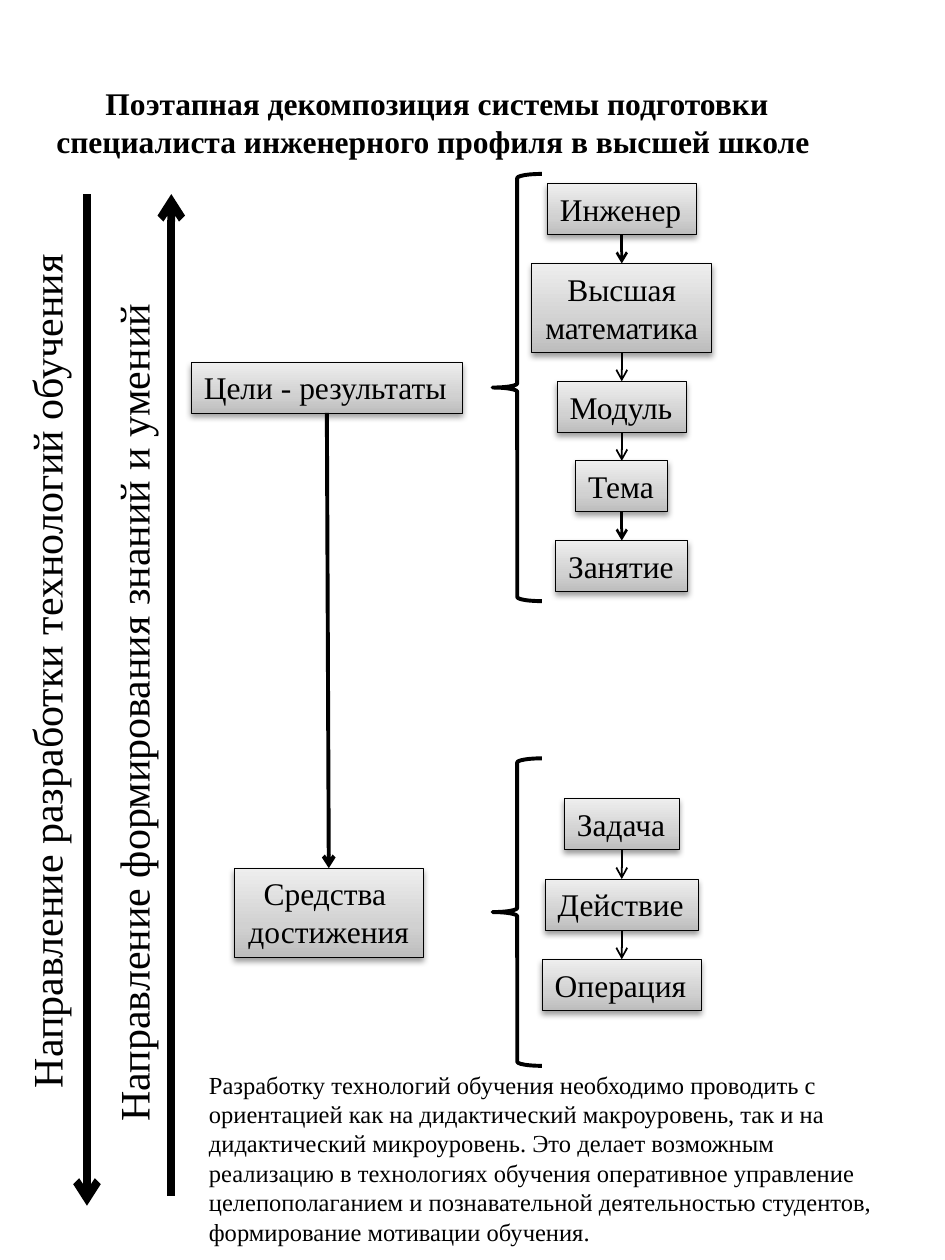
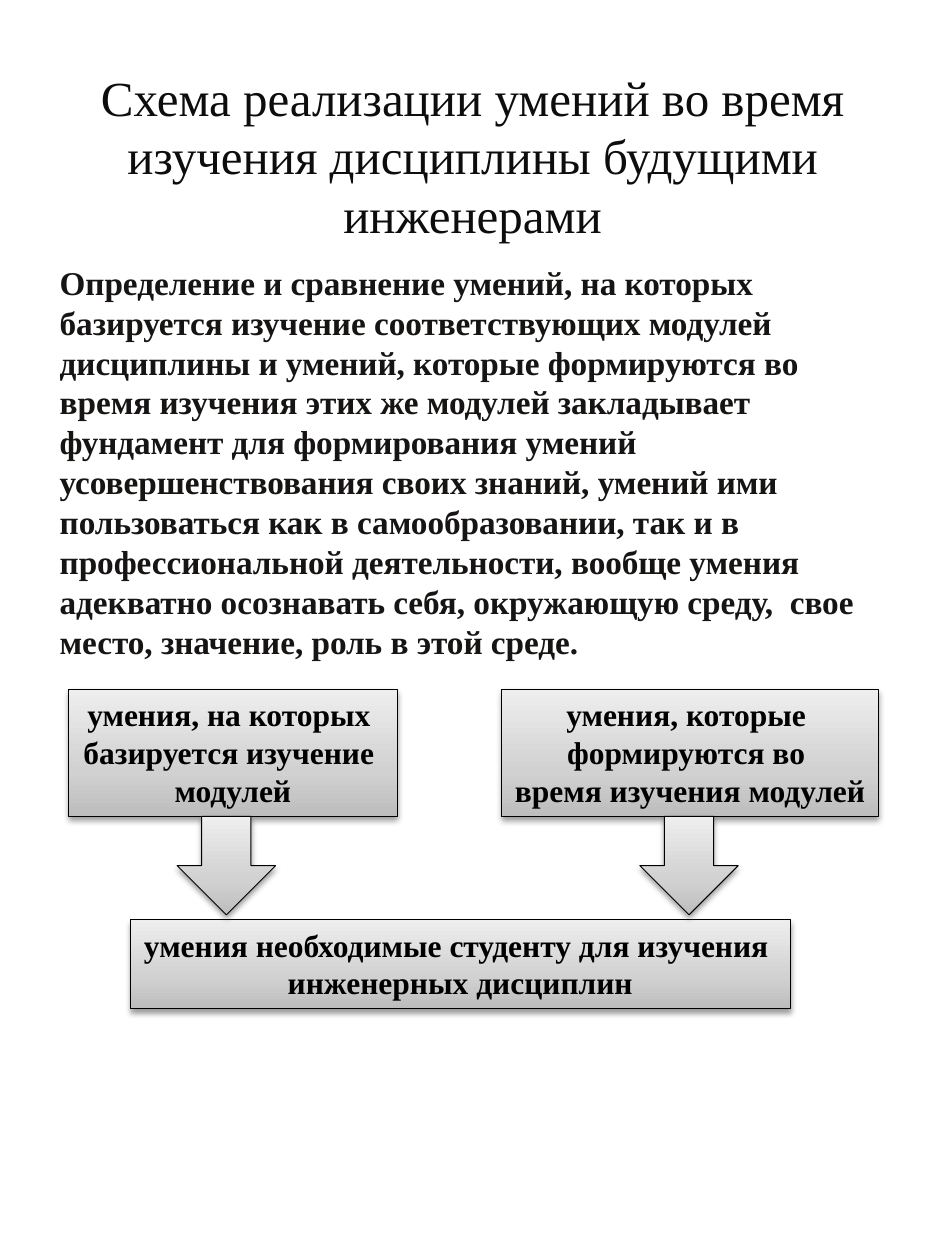
from copy import deepcopy

from pptx import Presentation
from pptx.dml.color import RGBColor
from pptx.enum import shapes, text
from pptx.oxml import parse_xml
from pptx.oxml.ns import nsdecls, qn
from pptx.util import Pt

COLORS = {"ink": "000000", "title": "0D0D0D", "body": "161514",
          "dark": "BDBDBD", "middle": "D1D1D1", "light": "EEEEEE"}
GRADIENT = [(0, "dark"), (0.35, "middle"), (1, "light")]
FONT = "Times New Roman"
LEFT, CENTER = text.PP_ALIGN.LEFT, text.PP_ALIGN.CENTER
TOP, MIDDLE = text.MSO_ANCHOR.TOP, text.MSO_ANCHOR.MIDDLE
LINE_HEIGHT, BOX_MARGINS = 21.8, 7.3

# Slide 1: decomposition
DECOMPOSITION_TITLE = ("Поэтапная декомпозиция системы подготовки специалиста "
                       "инженерного профиля в высшей школе ")
DECOMPOSITION_NOTE = (
    "Разработку технологий обучения необходимо проводить с ориентацией как на "
    "дидактический макроуровень, так и на дидактический микроуровень. Это делает "
    "возможным реализацию в технологиях обучения оперативное управление "
    "целепополаганием и познавательной деятельностью студентов, формирование "
    "мотивации обучения.")
# label, label centre, label length, arrow start, arrow end
DIRECTIONS = [
    ("Направление разработки технологий обучения", (26.3, 380.9), 496,
     (49.7, 110.9), (49.7, 689)),
    ("Направление формирования знаний и умений", (76, 404.6), 486.7,
     (97.9, 683.3), (97.9, 110.9)),
]
GOALS = (["Цели - результаты"], 109.4, 206.9, 154.8)
MEANS = (["Средства ", "достижения"], 133.9, 496.1, 108)
CHAIN_CENTER = 355.3
CHAINS = [
    {"top": 105.1, "gap": 16.4, "brace": (99.4, 244.1), "weights": [1.5, 1, 1, 1.5],
     "boxes": [(["Инженер"], 85), (["Высшая", "математика"], 103), (["Модуль"], 73.6),
               (["Тема"], 52.6), (["Занятие"], 75.6)]},
    {"top": 456.5, "gap": 16.75, "brace": (433.4, 175.7), "weights": [1, 1],
     "boxes": [(["Задача"], 65.5), (["Действие"], 87.4), (["Операция"], 90.7)]},
]

# Slide 2: skills scheme
SKILLS_TITLE = "Схема реализации умений во время изучения дисциплины будущими инженерами"
SKILLS_TEXT = (
    "Определение и сравнение умений, на которых базируется изучение соответствующих "
    "модулей дисциплины и умений, которые формируются во время изучения этих же модулей "
    "закладывает фундамент для формирования умений усовершенствования своих знаний, "
    "умений ими пользоваться как в самообразовании, так и в профессиональной "
    "деятельности, вообще умения адекватно осознавать себя, окружающую среду,  свое "
    "место, значение, роль в этой среде.")
SKILLS_BOXES = [
    (["умения, на которых ", "базируется изучение ", "модулей"], 39.3, 393.8, 187.6),
    (["умения, которые ", "формируются во ", "время изучения модулей"], 286.7, 393.8, 215.3),
    (["умения необходимые студенту для изучения ", "инженерных дисциплин"],
     74.6, 525.4, 376.9),
]
SKILLS_ARROW_LEFTS, SKILLS_ARROW_SIZE = [101.2, 365.6], 56.3


def color(name):
    return RGBColor.from_string(COLORS[name])


def points(values):
    return [Pt(value) for value in values]


def write(shape, lines, size, ink="ink", bold=False, align=LEFT, anchor=TOP,
          wrap=True, grow=True):
    frame = shape.text_frame
    frame.text = "\n".join(lines)
    fit = text.MSO_AUTO_SIZE.SHAPE_TO_FIT_TEXT if grow else text.MSO_AUTO_SIZE.NONE
    for name, value in {"word_wrap": wrap, "auto_size": fit,
                        "vertical_anchor": anchor}.items():
        setattr(frame, name, value)
    for paragraph in frame.paragraphs:
        paragraph.alignment = align
        for name, value in {"name": FONT, "size": Pt(size), "bold": bold}.items():
            setattr(paragraph.font, name, value)
        paragraph.font.color.rgb = color(ink)


def add_titled_slide(presentation, title, box, **style):
    slide = presentation.slides.add_slide(presentation.slide_layouts[5])
    place(slide.shapes.title, box)
    write(slide.shapes.title, [title], align=CENTER, grow=False, **style)
    return slide


def place(shape, box):
    for name, value in zip(("left", "top", "width", "height"), box):
        setattr(shape, name, Pt(value))


def add_text(slide, content, box, size, **style):
    shape = slide.shapes.add_textbox(*points(box))
    write(shape, [content], size, **style)
    return shape


def add_raised_shape(slide, kind, box):
    """Shape with the grey gradient, thin outline and soft shadow."""
    shape = slide.shapes.add_shape(kind, *points(box))
    shape.fill.gradient()
    shape.fill.gradient_angle = 90
    stops = shape._element.spPr.find(qn("a:gradFill")).find(qn("a:gsLst"))
    stops.append(deepcopy(stops[0]))
    for stop, (position, name) in zip(shape.fill.gradient_stops, GRADIENT):
        stop.position = position
        stop.color.rgb = color(name)
    shape.line.color.rgb = color("ink")
    shape.line.width = Pt(0.5)
    shape.shadow.inherit = False
    shape._element.spPr.find(qn("a:effectLst")).append(parse_xml(
        f'<a:outerShdw {nsdecls("a")} blurRad="{Pt(3.5)}" dist="{Pt(2)}" dir="5400000" '
        f'rotWithShape="0"><a:srgbClr val="{COLORS["ink"]}"><a:alpha val="38000"/>'
        '</a:srgbClr></a:outerShdw>'))
    return shape


def box_height(lines):
    return BOX_MARGINS + LINE_HEIGHT * len(lines)


def add_box(slide, lines, left, top, width, bold=False):
    shape = add_raised_shape(slide, shapes.MSO_SHAPE.RECTANGLE,
                             (left, top, width, box_height(lines)))
    write(shape, lines, 18, bold=bold, wrap=False,
          align=CENTER if len(lines) > 1 else LEFT)


def add_arrow(slide, start, end, weight):
    arrow = slide.shapes.add_connector(shapes.MSO_CONNECTOR.STRAIGHT,
                                       *points((*start, *end)))
    arrow.line.color.rgb = color("ink")
    arrow.line.width = Pt(weight)
    arrow.line._get_or_add_ln().append(
        parse_xml(f'<a:tailEnd {nsdecls("a")} type="arrow"/>'))
    arrow._element.spPr.append(parse_xml(f'<a:effectLst {nsdecls("a")}/>'))


def add_brace(slide, top, height):
    brace = slide.shapes.add_shape(shapes.MSO_SHAPE.LEFT_BRACE,
                                   *points((281.5, top, 28.1, height)))
    brace.fill.background()
    brace.line.color.rgb = color("ink")
    brace.line.width = Pt(2.25)
    brace.shadow.inherit = False


def add_chain(slide, chain):
    """Brace and a centred column of boxes joined by arrows."""
    add_brace(slide, *chain["brace"])
    top = chain["top"]
    for index, (lines, width) in enumerate(chain["boxes"]):
        if index:
            add_arrow(slide, (CHAIN_CENTER, top - chain["gap"]), (CHAIN_CENTER, top),
                      chain["weights"][index - 1])
        add_box(slide, lines, CHAIN_CENTER - width / 2, top, width)
        top += box_height(lines) + chain["gap"]


def build_decomposition(presentation):
    slide = add_titled_slide(presentation, DECOMPOSITION_TITLE, (16.5, 44.5, 466.5, 51),
                             size=18, bold=True)
    for label, (x, y), length, start, end in DIRECTIONS:
        add_arrow(slide, start, end, 4.5)
        box = (x - length / 2, y - 18, length, 36)
        add_text(slide, label, box, 24, wrap=False).rotation = 270
    for box in (GOALS, MEANS):
        add_box(slide, *box)
    lines, left, top, width = GOALS
    add_arrow(slide, (left + width / 2, top + box_height(lines)),
              (MEANS[1] + MEANS[3] / 2, MEANS[2]), 2.25)
    for chain in CHAINS:
        add_chain(slide, chain)
    add_text(slide, DECOMPOSITION_NOTE, (112.3, 607.7, 410.4, 108), 14)


def build_skills(presentation):
    slide = add_titled_slide(presentation, SKILLS_TITLE, (27, 28.8, 486, 120),
                             size=28, ink="title", anchor=MIDDLE)
    add_text(slide, SKILLS_TEXT, (27, 146.2, 486, 236.2), 19, ink="body", bold=True,
             grow=False)
    for box in SKILLS_BOXES:
        add_box(slide, *box, bold=True)
    lines, _, top, _ = SKILLS_BOXES[0]
    for left in SKILLS_ARROW_LEFTS:
        add_raised_shape(slide, shapes.MSO_SHAPE.DOWN_ARROW,
                         (left, top + box_height(lines), SKILLS_ARROW_SIZE, SKILLS_ARROW_SIZE))


def main():
    presentation = Presentation()
    presentation.slide_width, presentation.slide_height = Pt(540), Pt(720)
    build_decomposition(presentation)
    build_skills(presentation)
    presentation.save("out.pptx")


if __name__ == "__main__":
    main()
